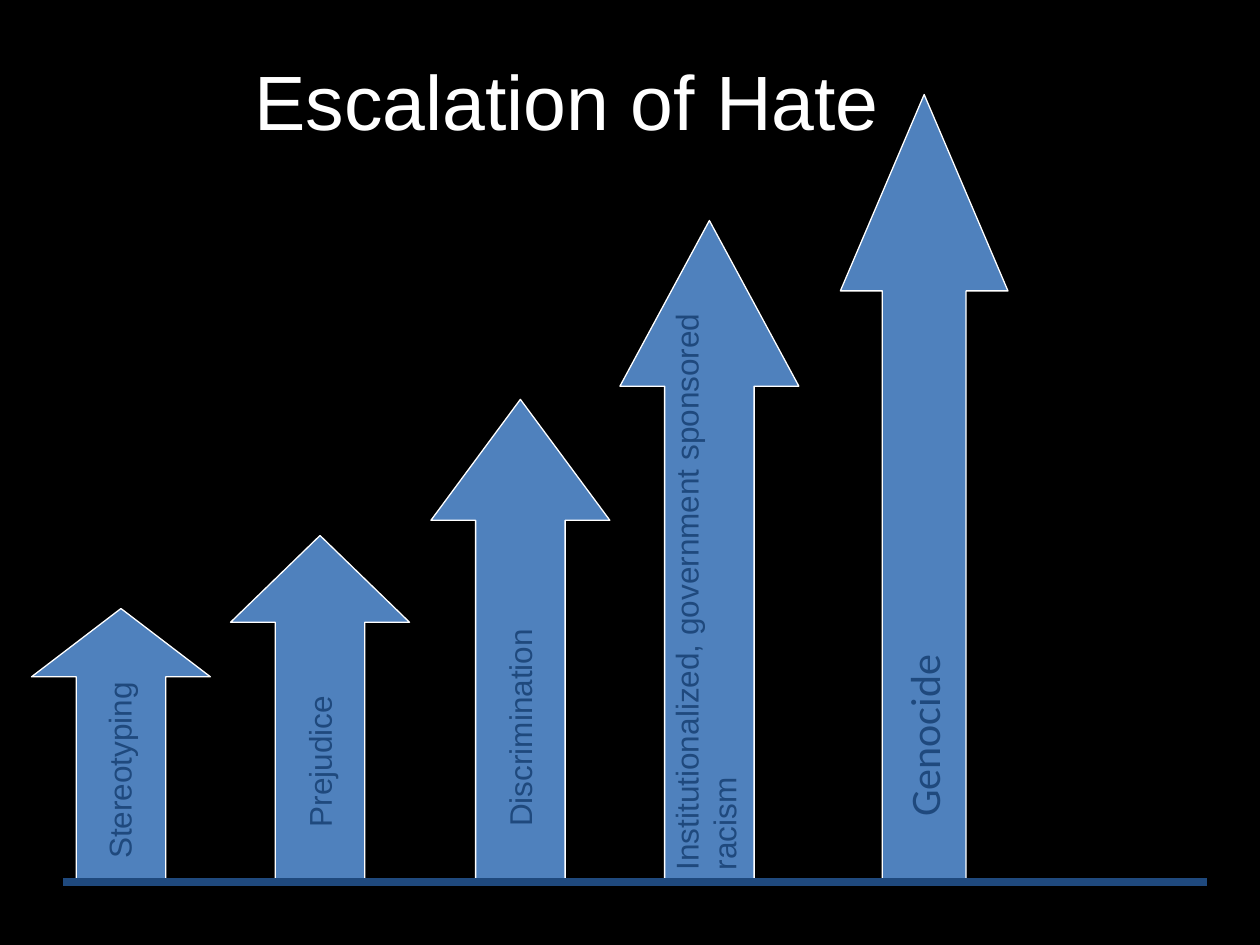
import pptx
import pptx.util
from pptx.dml.color import RGBColor
from pptx.enum.shapes import MSO_CONNECTOR, MSO_SHAPE
from pptx.enum.text import MSO_ANCHOR, MSO_AUTO_SIZE, PP_ALIGN
from pptx.oxml.ns import qn
from pptx.util import Inches
import lxml.etree

BLACK = RGBColor(0x00, 0x00, 0x00)
WHITE = RGBColor(0xFF, 0xFF, 0xFF)
BLUE = RGBColor(0x4F, 0x81, 0xBD)
NAVY = RGBColor(0x1F, 0x49, 0x7D)

BASELINE = 7.0

# Arrow left, width, height, head ratio
ARROWS = [
    (0.25, 1.42, 2.17, 0.382),
    (1.83, 1.42, 2.75, 0.485),
    (3.42, 1.42, 3.83, 0.676),
    (4.92, 1.42, 5.25, 0.926),
    (6.67, 1.33, 6.25, 1.172),
]

# Label text, centre x, centre y, length, thickness, font, size
LABELS = [
    ("Stereotyping", 0.96, 6.0, 1.83, 0.43, "Arial", 18),
    ("Prejudice", 2.55, 5.83, 1.67, 0.43, "Arial", 18),
    ("Discrimination", 4.14, 5.2, 2.92, 0.43, "Arial", 18),
    ("Institutionalized, government sponsored racism",
     5.63, 4.67, 4.67, 0.77, "Arial", 18),
    ("Genocide", 7.33, 4.58, 4.0, 0.5, "Calibri", 24),
]


class SlideBuilder:
    """Holds the slide and its shared style."""

    def __init__(self, slide):
        self.slide = slide
        slide.background.fill.solid()
        slide.background.fill.fore_color.rgb = BLACK

    def style_text(self, paragraph, font_name, size, color):
        paragraph.font.name = font_name
        paragraph.font.size = pptx.util.Pt(size)
        paragraph.font.color.rgb = color

    def title(self, text, left, top, width, height):
        shape = self.slide.shapes.title
        shape.left, shape.top = Inches(left), Inches(top)
        shape.width, shape.height = Inches(width), Inches(height)
        frame = shape.text_frame
        frame.text = text
        frame.auto_size = MSO_AUTO_SIZE.NONE
        frame.vertical_anchor = MSO_ANCHOR.MIDDLE
        paragraph = frame.paragraphs[0]
        paragraph.alignment = PP_ALIGN.CENTER
        self.style_text(paragraph, "Arial", 44, WHITE)

    def arrow(self, left, width, height, head_ratio):
        shape = self.slide.shapes.add_shape(
            MSO_SHAPE.UP_ARROW, Inches(left), Inches(BASELINE - height),
            Inches(width), Inches(height))
        shape.adjustments[0] = 0.5
        shape.adjustments[1] = head_ratio
        shape.shadow.inherit = False
        shape.fill.solid()
        shape.fill.fore_color.rgb = BLUE
        shape.line.color.rgb = WHITE
        shape.line.width = pptx.util.Pt(0.75)

    def label(self, text, center_x, center_y, length, thickness, font_name, size):
        shape = self.slide.shapes.add_textbox(
            Inches(center_x - length / 2), Inches(center_y - thickness / 2),
            Inches(length), Inches(thickness))
        shape.rotation = 270
        frame = shape.text_frame
        frame.word_wrap = True
        frame.auto_size = MSO_AUTO_SIZE.SHAPE_TO_FIT_TEXT
        frame.text = text
        self.style_text(frame.paragraphs[0], font_name, size, NAVY)

    def line(self, start_x, end_x, y):
        connector = self.slide.shapes.add_connector(
            MSO_CONNECTOR.STRAIGHT, Inches(start_x), Inches(y),
            Inches(end_x), Inches(y))
        connector.line.color.rgb = NAVY
        connector.line.width = pptx.util.Pt(4.5)
        properties = connector._element.find(qn("p:spPr"))
        lxml.etree.SubElement(properties, qn("a:effectLst"))


def main():
    presentation = pptx.Presentation()
    presentation.slide_width = Inches(10)
    presentation.slide_height = Inches(7.5)
    layout = presentation.slide_layouts.get_by_name("Title Only")
    builder = SlideBuilder(presentation.slides.add_slide(layout))

    # Title
    builder.title("Escalation of Hate", 0, 0.33, 9, 0.92)

    # Rising arrows and their upright labels
    for arrow in ARROWS:
        builder.arrow(*arrow)
    for label in LABELS:
        builder.label(*label)

    # Ground line
    builder.line(0.5, 9.58, BASELINE)

    presentation.save("out.pptx")


if __name__ == "__main__":
    main()
